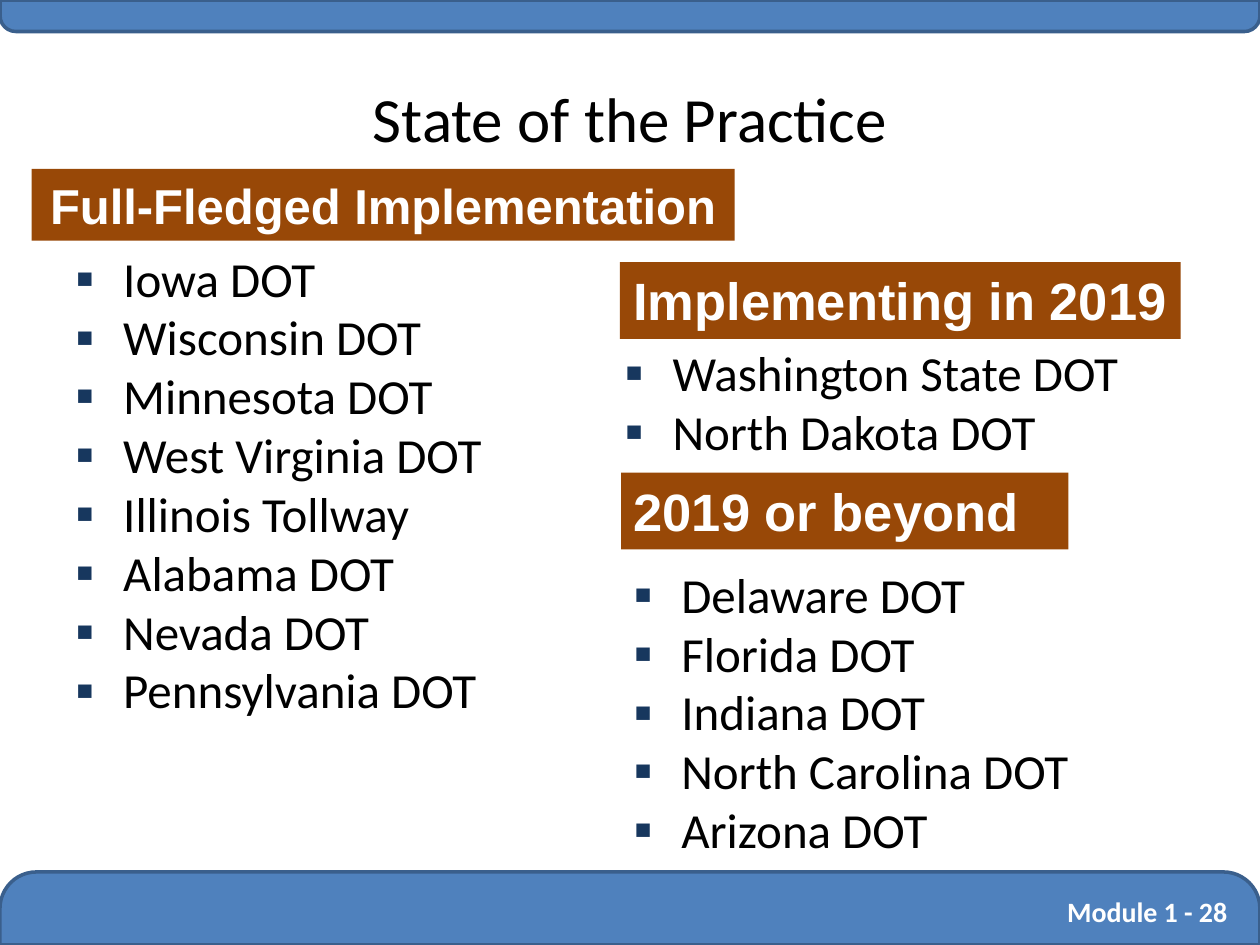
import dataclasses

import lxml.etree
import pptx
import pptx.dml.color
import pptx.enum.shapes
import pptx.enum.text
import pptx.oxml.ns
import pptx.util

Inches = pptx.util.Inches
Pt = pptx.util.Pt
RGB = pptx.dml.color.RGBColor.from_string
ALIGN = pptx.enum.text.PP_ALIGN
SHAPE = pptx.enum.shapes.MSO_SHAPE


@dataclasses.dataclass(frozen=True)
class Theme:
    body_font: str = "Calibri"
    label_font: str = "Arial"
    bar: str = "4F81BD"
    bar_line: str = "3A5F8C"
    label: str = "984807"
    bullet: str = "17375E"
    text: str = "000000"
    light: str = "FFFFFF"
    title_size: int = 36
    title_leading: int = 44
    body_size: int = 28
    label_size: int = 30
    footer_size: int = 16


THEME = Theme()


def add_run(p, text, size, color, font=THEME.body_font, bold=False):
    r = p.add_run()
    r.text = text
    r.font.name = font
    r.font.size = Pt(size)
    r.font.bold = bold
    r.font.color.rgb = RGB(color)


def add_text_frame(s, box):
    tf = s.shapes.add_textbox(*map(Inches, box)).text_frame
    tf.word_wrap = True
    return tf


def add_filled(s, kind, box, fill):
    sp = s.shapes.add_shape(kind, *map(Inches, box))
    sp.shadow.inherit = False
    sp.fill.solid()
    sp.fill.fore_color.rgb = RGB(fill)
    sp.line.fill.background()
    return sp


def add_bar(s, box, rotation=0):
    sp = add_filled(s, SHAPE.ROUND_2_SAME_RECTANGLE, box, THEME.bar)
    sp.adjustments[0] = 0.5
    sp.rotation = rotation
    sp.line.color.rgb = RGB(THEME.bar_line)
    sp.line.width = Pt(2)


def add_footer(s, box, text):
    p = add_text_frame(s, box).paragraphs[0]
    p.alignment = ALIGN.RIGHT
    add_run(p, text, THEME.footer_size, THEME.light, bold=True)


def add_title(s, box, text):
    tf = add_text_frame(s, box)
    tf.vertical_anchor = pptx.enum.text.MSO_ANCHOR.MIDDLE
    p = tf.paragraphs[0]
    p.alignment = ALIGN.CENTER
    p.line_spacing = Pt(THEME.title_leading)
    add_run(p, text, THEME.title_size, THEME.text)


def add_label(s, box, text, size=THEME.label_size, align=ALIGN.CENTER):
    tf = add_filled(s, SHAPE.RECTANGLE, box, THEME.label).text_frame
    tf.word_wrap = True
    tf.vertical_anchor = pptx.enum.text.MSO_ANCHOR.TOP
    p = tf.paragraphs[0]
    p.alignment = align
    add_run(p, text, size, THEME.light, THEME.label_font, bold=True)


def set_bullet(p):
    """Give the paragraph a hanging square bullet."""
    qn = pptx.oxml.ns.qn
    pPr = p._p.get_or_add_pPr()
    indent = Inches(0.38)
    pPr.set("marL", str(indent))
    pPr.set("indent", str(-indent))
    color = lxml.etree.SubElement(pPr, qn("a:buClr"))
    lxml.etree.SubElement(color, qn("a:srgbClr"), val=THEME.bullet)
    lxml.etree.SubElement(pPr, qn("a:buSzPct"), val="110000")
    lxml.etree.SubElement(pPr, qn("a:buFont"), typeface=THEME.label_font)
    lxml.etree.SubElement(pPr, qn("a:buChar"), char="▪")


def add_agencies(s, box, names):
    tf = add_text_frame(s, box)
    for i, name in enumerate(names):
        p = tf.add_paragraph() if i else tf.paragraphs[0]
        set_bullet(p)
        add_run(p, name, THEME.body_size, THEME.text)


def main():
    prs = pptx.Presentation()
    prs.slide_width, prs.slide_height = Inches(10), Inches(7.5)
    s = prs.slides.add_slide(prs.slide_layouts[6])

    add_bar(s, (0, 6.92, 10, 0.58))
    add_bar(s, (0, 0, 10, 0.25), rotation=180)
    add_footer(s, (8.17, 7.05, 1.67, 0.37), "Module 1 - 28")
    add_title(s, (0.5, 0.3, 9, 1.25), "State of the Practice")

    add_agencies(s, (0.5, 1.92, 3.67, 3.92), [
        "Iowa DOT", "Wisconsin DOT", "Minnesota DOT", "West Virginia DOT",
        "Illinois Tollway", "Alabama DOT", "Nevada DOT", "Pennsylvania DOT"])
    add_label(s, (0.25, 1.34, 5.58, 0.57), "Full-Fledged Implementation",
              size=THEME.body_size)

    add_agencies(s, (4.86, 2.67, 4.67, 1.47),
                 ["Washington State DOT", "North Dakota DOT"])
    add_label(s, (4.92, 2.08, 4.45, 0.61), "Implementing in 2019")

    add_label(s, (4.93, 3.75, 3.55, 0.61), "2019 or beyond", align=ALIGN.LEFT)
    add_agencies(s, (4.93, 4.43, 3.9, 2.4), [
        "Delaware DOT", "Florida DOT", "Indiana DOT", "North Carolina DOT",
        "Arizona DOT"])

    prs.save("out.pptx")


if __name__ == "__main__":
    main()
